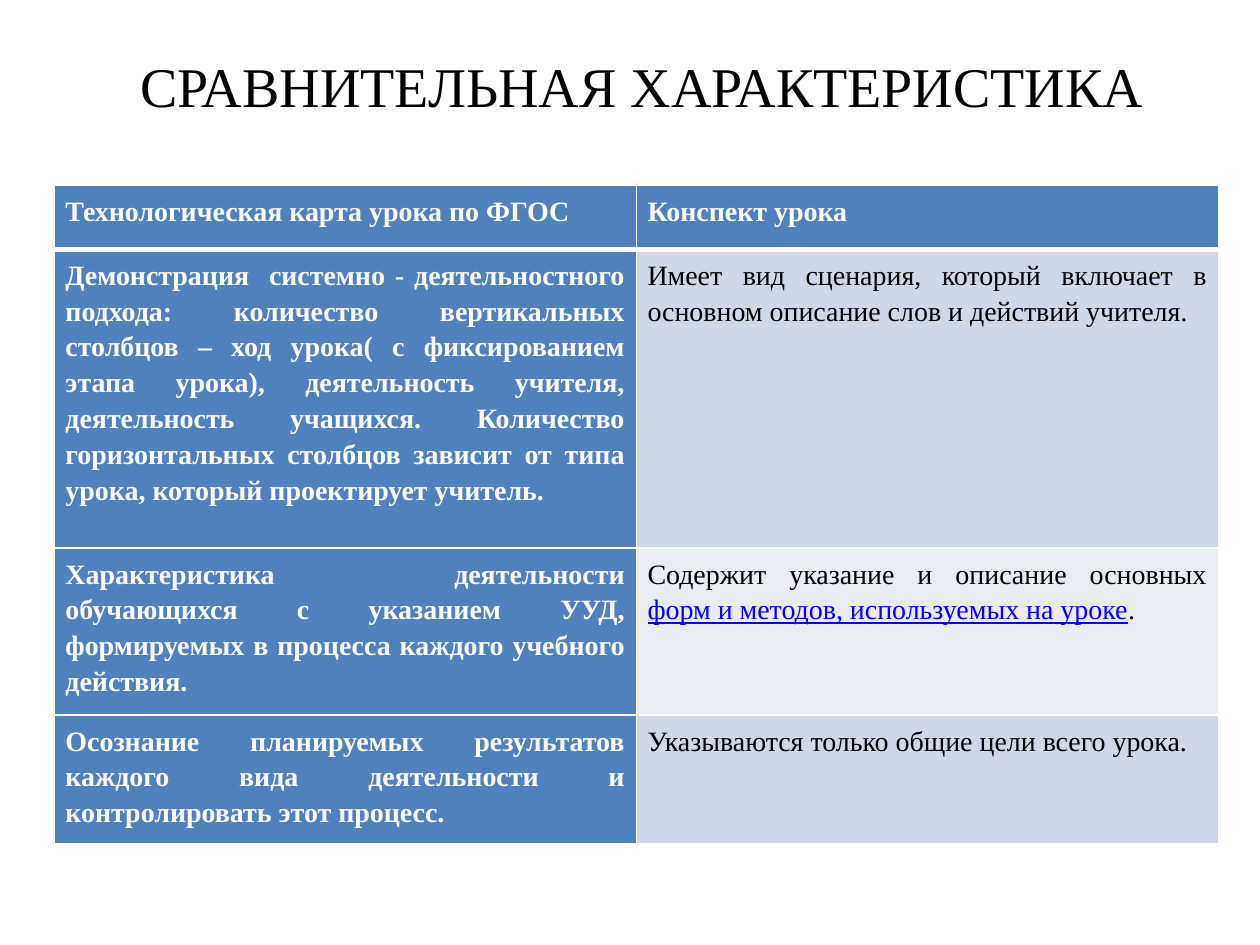
"""Build a slide comparing a lesson flow chart with a lesson summary."""
from lxml import etree
from pptx import Presentation, util as u
from pptx.dml.color import RGBColor
from pptx.enum import text
from pptx.oxml.ns import qn

TITLE = "СРАВНИТЕЛЬНАЯ ХАРАКТЕРИСТИКА "
ROWS = [
    (["Технологическая карта урока по ФГОС"], ["Конспект урока"]),
    (["Демонстрация  системно - деятельностного подхода: количество вертикальных "
      "столбцов – ход урока( с фиксированием этапа урока), деятельность учителя, "
      "деятельность учащихся. Количество горизонтальных столбцов зависит от типа "
      "урока, который проектирует учитель. "],
     ["Имеет вид сценария, который включает в основном описание слов и действий учителя."]),
    (["Характеристика деятельности обучающихся с указанием УУД, формируемых "
      "в процесса каждого учебного действия."],
     ["Содержит указание и описание основных ",
      ("форм и методов, используемых на уроке", "link"), "."]),
    (["Осознание планируемых результатов каждого вида деятельности "
      "и контролировать этот процесс."],
     ["Указываются только общие цели всего урока."]),
]
ROW_HEIGHTS = [0.51, 2.37, 1.24, 0.95]
COLUMN_WIDTH = 4.62
THEME = {
    "font": "Times New Roman", "title_size": 32, "body_size": 16,
    "accent": "4F81BD", "bands": ["E9ECF3", "D0D8E7"], "line": "FFFFFF",
    "light": "FFFFFF", "dark": "000000", "link": "0000FF",
    "thin": 0.96, "thick": 3,
}


def apply(target, values):
    for name, value in values.items():
        setattr(target, name, value)


def style_font(font, size, color, **values):
    apply(font, {"name": THEME["font"], "size": u.Pt(size), **values})
    font.color.rgb = RGBColor.from_string(color)


def set_borders(cell, widths):
    properties = cell._tc.get_or_add_tcPr()
    for position, (side, width) in enumerate(widths.items()):
        line = etree.Element(qn(f"a:ln{side}"), w=str(u.Pt(width)))
        fill = etree.SubElement(line, qn("a:solidFill"))
        etree.SubElement(fill, qn("a:srgbClr"), val=THEME["line"])
        properties.insert(position, line)


def fill_cell(cell, parts, row, column):
    emphasized = row == 0 or column == 0
    background = THEME["accent"] if emphasized else THEME["bands"][row % 2]
    cell.fill.solid()
    cell.fill.fore_color.rgb = RGBColor.from_string(background)
    apply(cell, {"margin_left": u.Inches(0.09), "margin_right": u.Inches(0.09),
                 "margin_top": u.Inches(0.05), "margin_bottom": u.Inches(0.05)})
    paragraph = cell.text_frame.paragraphs[0]
    apply(paragraph, {"alignment": text.PP_ALIGN.JUSTIFY, "line_spacing": 1.15})
    for part in parts:
        words, role = part if isinstance(part, tuple) else (
            part, "light" if emphasized else "dark")
        run = paragraph.add_run()
        run.text = words
        style_font(run.font, THEME["body_size"], THEME[role],
                   bold=emphasized, underline=role == "link")
    thin, thick = THEME["thin"], THEME["thick"]
    set_borders(cell, {"L": thin, "R": thin, "T": thick if row == 1 else thin,
                       "B": thick if row == 0 else thin})


def add_title(slide):
    title = slide.shapes.title
    apply(title, {"left": u.Inches(0.91), "top": u.Inches(0.36),
                  "width": u.Inches(8.49), "height": u.Inches(0.64)})
    apply(title.text_frame, {"text": TITLE, "word_wrap": False,
                             "auto_size": text.MSO_AUTO_SIZE.SHAPE_TO_FIT_TEXT,
                             "vertical_anchor": text.MSO_ANCHOR.TOP})
    paragraph = title.text_frame.paragraphs[0]
    paragraph.alignment = text.PP_ALIGN.CENTER
    style_font(paragraph.runs[0].font, THEME["title_size"], THEME["dark"])


def add_comparison(slide):
    columns = len(ROWS[0])
    table = slide.shapes.add_table(
        len(ROWS), columns, u.Inches(0.43), u.Inches(1.47),
        u.Inches(COLUMN_WIDTH * columns), u.Inches(sum(ROW_HEIGHTS))).table
    for column in table.columns:
        column.width = u.Inches(COLUMN_WIDTH)
    for row, (height, contents) in enumerate(zip(ROW_HEIGHTS, ROWS)):
        table.rows[row].height = u.Inches(height)
        for column, parts in enumerate(contents):
            fill_cell(table.cell(row, column), parts, row, column)


def main():
    presentation = Presentation()
    apply(presentation, {"slide_width": u.Inches(10), "slide_height": u.Inches(7.5)})
    slide = presentation.slides.add_slide(presentation.slide_layouts[5])
    add_comparison(slide)
    add_title(slide)
    presentation.save("out.pptx")


if __name__ == "__main__":
    main()
